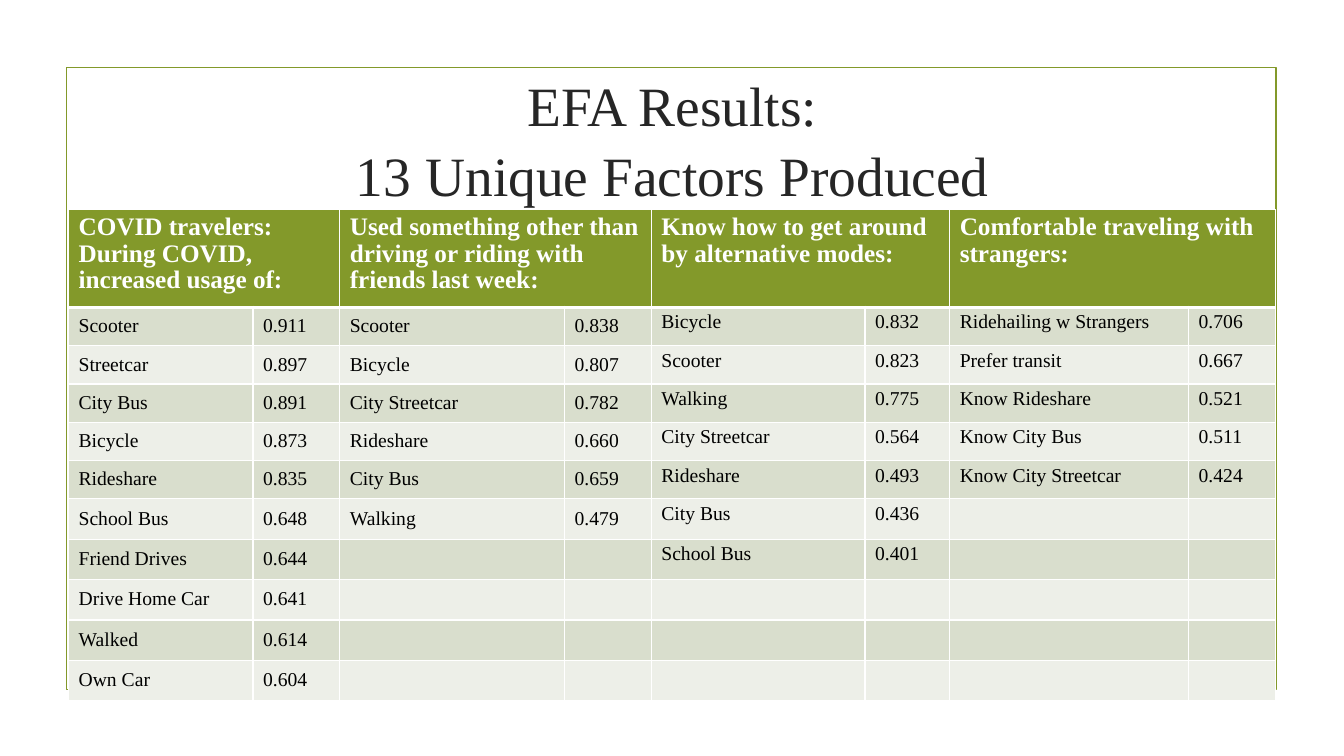
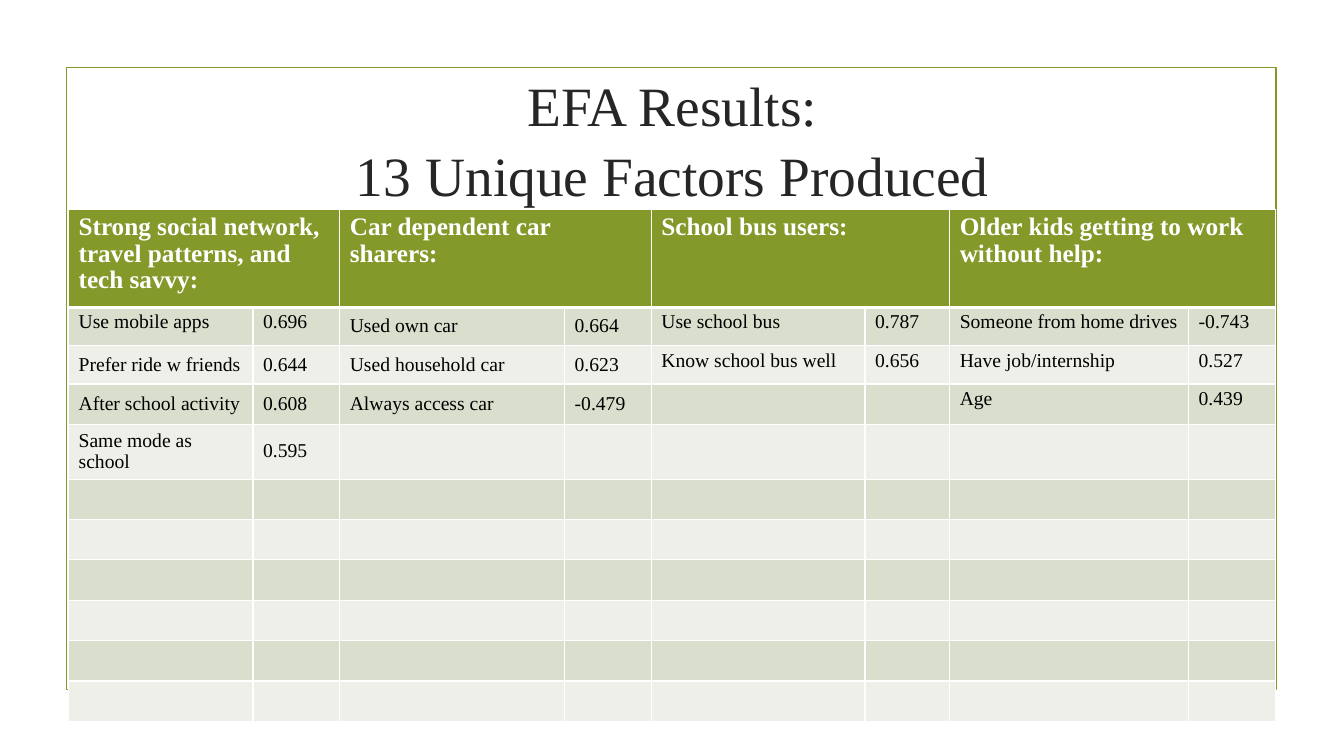
import lxml.etree
import pptx
import pptx.dml.color
import pptx.enum.shapes
import pptx.enum.text
import pptx.oxml.ns
import pptx.util

FONT = "Times New Roman"
GREEN, WHITE, BLACK, CHARCOAL = "83992A", "FFFFFF", "000000", "262626"
BANDS = ["D9DECD", "EDEFE8"]
MIDDLE = pptx.enum.text.MSO_ANCHOR.MIDDLE
TOP = pptx.enum.text.MSO_ANCHOR.TOP
TITLE_LINES = ["EFA Results:", "13 Unique Factors Produced"]
COLUMN_WIDTHS = [1.83, 0.86, 2.23, 0.86, 2.12, 0.84, 2.37, 0.86]
HEADER_HEIGHT, ROW_HEIGHT, ROW_COUNT = 0.97, 0.38, 10

FACTOR_PAGES = [
    [
        ("COVID travelers: During COVID, increased usage of:", [
            ("Scooter", "0.911"), ("Streetcar", "0.897"), ("City Bus", "0.891"),
            ("Bicycle", "0.873"), ("Rideshare", "0.835"), ("School Bus", "0.648"),
            ("Friend Drives", "0.644"), ("Drive Home Car", "0.641"),
            ("Walked", "0.614"), ("Own Car", "0.604")]),
        ("Used something other than driving or riding with friends last week:", [
            ("Scooter", "0.838"), ("Bicycle", "0.807"), ("City Streetcar", "0.782"),
            ("Rideshare", "0.660"), ("City Bus", "0.659"), ("Walking", "0.479")]),
        ("Know how to get around by alternative modes:", [
            ("Bicycle", "0.832"), ("Scooter", "0.823"), ("Walking", "0.775"),
            ("City Streetcar", "0.564"), ("Rideshare", "0.493"),
            ("City Bus", "0.436"), ("School Bus", "0.401")]),
        ("Comfortable traveling with strangers:", [
            ("Ridehailing w Strangers", "0.706"), ("Prefer transit", "0.667"),
            ("Know Rideshare", "0.521"), ("Know City Bus", "0.511"),
            ("Know City Streetcar", "0.424")]),
    ],
    [
        ("Strong social network, travel patterns, and tech savvy:", [
            ("Use mobile apps", "0.696"), ("Prefer ride w friends", "0.644"),
            ("After school activity", "0.608"), ("Same mode as school", "0.595")]),
        ("Car dependent car sharers:", [
            ("Used own car", "0.664"), ("Used household car", "0.623"),
            ("Always access car", "-0.479")]),
        ("School bus users:", [
            ("Use school bus", "0.787"), ("Know school bus well", "0.656")]),
        ("Older kids getting to work without help:", [
            ("Someone from home drives", "-0.743"), ("Have job/internship", "0.527"),
            ("Age", "0.439")]),
    ],
]


def write(para, text, size, color, bold=False):
    span = para.add_run()
    span.text = text
    span.font.name = FONT
    span.font.size = pptx.util.Pt(size)
    span.font.bold = bold
    span.font.color.rgb = pptx.dml.color.RGBColor.from_string(color)


def style_cell(cell, fill, top_width, bottom_width):
    properties = cell._tc.get_or_add_tcPr()
    for side, width in zip("LRTB", [1, 1, top_width, bottom_width]):
        border = lxml.etree.SubElement(
            properties, pptx.oxml.ns.qn("a:ln" + side), w=str(pptx.util.Pt(width)))
        solid = lxml.etree.SubElement(border, pptx.oxml.ns.qn("a:solidFill"))
        lxml.etree.SubElement(solid, pptx.oxml.ns.qn("a:srgbClr"), val=WHITE)
    cell.fill.solid()
    cell.fill.fore_color.rgb = pptx.dml.color.RGBColor.from_string(fill)
    cell.text_frame.paragraphs[0].line_spacing = 0.95


inch = pptx.util.Inches
deck = pptx.Presentation()
deck.slide_width, deck.slide_height = inch(13.33), inch(7.5)

for page_number, factors in enumerate(FACTOR_PAGES):
    page = deck.slides.add_slide(deck.slide_layouts[6])

    frame = page.shapes.add_shape(
        pptx.enum.shapes.MSO_SHAPE.RECTANGLE, inch(0.66), inch(0.67), inch(12), inch(6.17))
    frame.shadow.inherit = False
    frame.fill.background()
    frame.line.color.rgb = pptx.dml.color.RGBColor.from_string(GREEN)
    frame.line.width = pptx.util.Pt(1.25)

    title = page.shapes.add_textbox(inch(1.42), inch(0.65), inch(10.5), inch(1.43))
    title.text_frame.word_wrap = True
    title.text_frame.vertical_anchor = MIDDLE
    para = title.text_frame.paragraphs[0]
    para.alignment = pptx.enum.text.PP_ALIGN.CENTER
    para.line_spacing = 1.05
    write(para, TITLE_LINES[0], 39.6, CHARCOAL)
    para.add_line_break()
    write(para, TITLE_LINES[1], 39.6, CHARCOAL)

    table = page.shapes.add_table(
        ROW_COUNT + 1, len(COLUMN_WIDTHS), inch(0.68), inch(2.08),
        inch(sum(COLUMN_WIDTHS)), inch(HEADER_HEIGHT + ROW_COUNT * ROW_HEIGHT)).table
    for column, width in zip(table.columns, COLUMN_WIDTHS):
        column.width = inch(width)
    for row_number, row in enumerate(table.rows):
        row.height = inch(ROW_HEIGHT if row_number else HEADER_HEIGHT)
        for cell in row.cells:
            style_cell(
                cell, BANDS[(row_number - 1) % 2] if row_number else GREEN,
                3 if row_number == 1 else 1, 1 if row_number else 3)

    for factor_number, (heading, loadings) in enumerate(factors):
        first_column = 2 * factor_number
        header = table.cell(0, first_column)
        header.merge(table.cell(0, first_column + 1))
        write(header.text_frame.paragraphs[0], heading, 18, WHITE, True)
        for row_number, loading in enumerate(loadings, 1):
            top_row = page_number == 1 and factor_number == 0 and row_number == 1
            for offset, text in enumerate(loading):
                cell = table.cell(row_number, first_column + offset)
                cell.vertical_anchor = TOP if factor_number > 1 or top_row else MIDDLE
                write(cell.text_frame.paragraphs[0], text, 14, BLACK)

deck.save("out.pptx")
